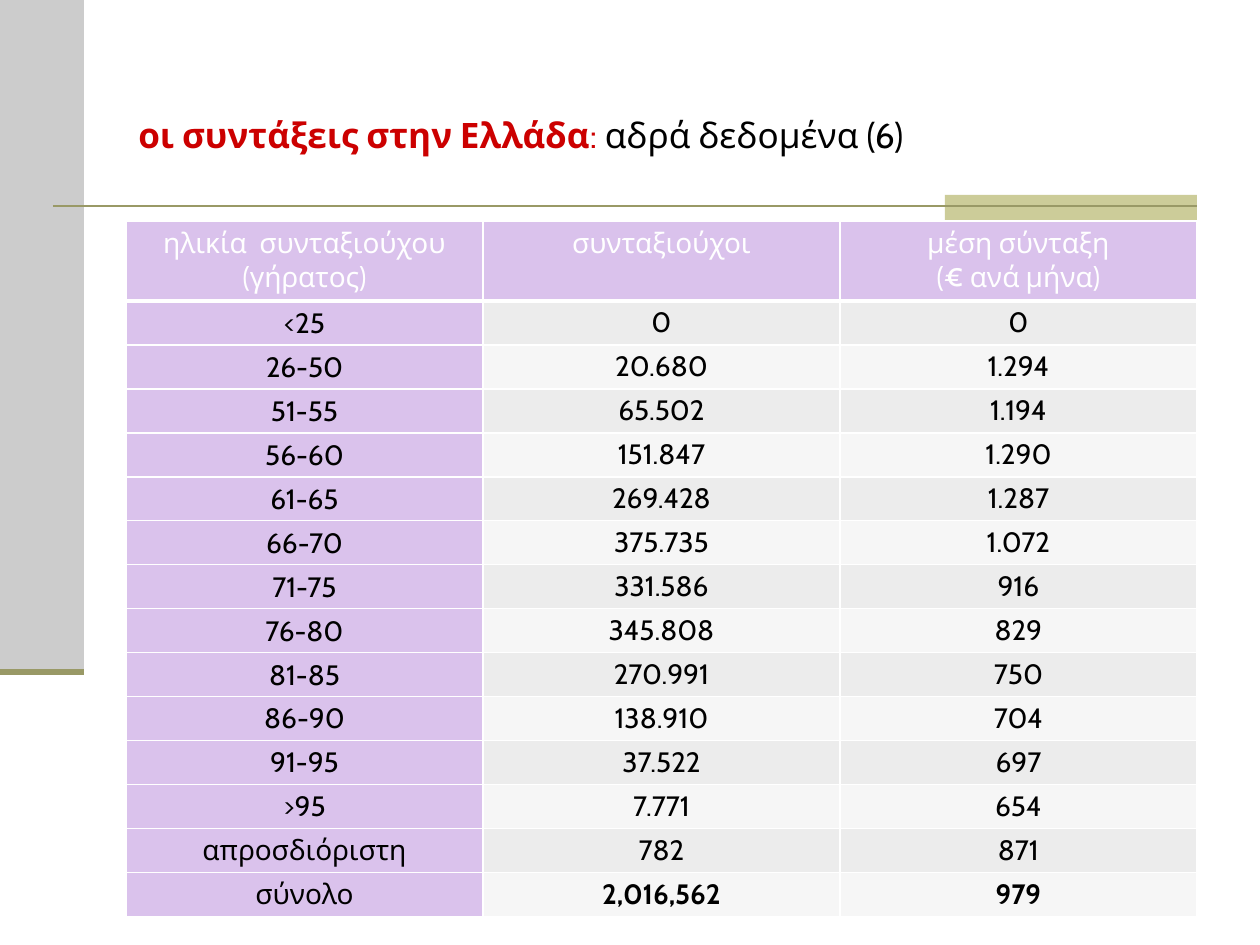
from lxml import etree
from pptx import Presentation, util as u
from pptx.dml.color import RGBColor
from pptx.enum import shapes, text
from pptx.oxml import ns

PX = 914400 / 126
GREY = RGBColor(0xCC, 0xCC, 0xCC)
SAND = RGBColor(0xCC, 0xCC, 0x99)
OLIVE = RGBColor(0x99, 0x99, 0x66)
RED = RGBColor(0xCC, 0x00, 0x00)
BLACK = RGBColor(0x00, 0x00, 0x00)
WHITE = RGBColor(0xFF, 0xFF, 0xFF)
LILAC = RGBColor(0xDA, 0xC2, 0xEC)
BANDS = RGBColor(0xEC, 0xEC, 0xEC), RGBColor(0xF6, 0xF6, 0xF6)

HEADER = "ηλικία  συνταξιούχου (γήρατος)", "συνταξιούχοι", "μέση σύνταξη\n(€ ανά μήνα)"
PENSIONS = [
    ("<25", "0", "0"),
    ("26-50", "20.680", "1.294"),
    ("51-55", "65.502", "1.194"),
    ("56-60", "151.847", "1.290"),
    ("61-65", "269.428", "1.287"),
    ("66-70", "375.735", "1.072"),
    ("71-75", "331.586", "916"),
    ("76-80", "345.808", "829"),
    ("81-85", "270.991", "750"),
    ("86-90", "138.910", "704"),
    ("91-95", "37.522", "697"),
    (">95", "7.771", "654"),
    ("απροσδιόριστη", "782", "871"),
    ("σύνολο", "2,016,562", "979"),
]


def px(*values):
    return [u.Emu(round(v * PX)) for v in values]


def add_text(p, content, size=16, color=BLACK, bold=False, font="Cabin"):
    for i, line in enumerate(content.split("\n")):
        if i:
            p.add_line_break()
        r = p.add_run()
        r.text = line
        r.font.name, r.font.size, r.font.bold = font, u.Pt(size), bold
        r.font.color.rgb = color


class Deck:
    """Draws styled elements on the current slide."""

    def __init__(self, prs):
        self.s = prs.slides.add_slide(prs.slide_layouts[6])

    def rect(self, x, y, w, h, color):
        sp = self.s.shapes.add_shape(shapes.MSO_SHAPE.RECTANGLE, *px(x, y, w, h))
        sp.shadow.inherit = False
        sp.fill.solid()
        sp.fill.fore_color.rgb = color
        sp.line.fill.background()

    def line(self, x1, y1, x2, y2, width):
        ln = self.s.shapes.add_connector(shapes.MSO_CONNECTOR.STRAIGHT, *px(x1, y1, x2, y2))
        ln.line.color.rgb = OLIVE
        ln.line.width = u.Pt(width)
        etree.SubElement(ln._element.spPr, ns.qn("a:effectLst"))

    def title(self, x, y, w, h, parts):
        tf = self.s.shapes.add_textbox(*px(x, y, w, h)).text_frame
        tf.word_wrap = True
        tf.vertical_anchor = text.MSO_ANCHOR.MIDDLE
        for content, style in parts:
            add_text(tf.paragraphs[0], content, size=20, **style)

    def borders(self, cell, top=1, bottom=1):
        tc_pr = cell._tc.get_or_add_tcPr()
        for side, width in zip("LRTB", (1, 1, top, bottom)):
            ln = etree.SubElement(tc_pr, ns.qn(f"a:ln{side}"), w=str(u.Pt(width)))
            fill = etree.SubElement(ln, ns.qn("a:solidFill"))
            etree.SubElement(fill, ns.qn("a:srgbClr"), val=str(WHITE))

    def cell(self, cell, content, fill, margins, anchor, top=1, bottom=1, **style):
        self.borders(cell, top, bottom)
        cell.fill.solid()
        cell.fill.fore_color.rgb = fill
        cell.margin_left, cell.margin_top, cell.margin_right, cell.margin_bottom = px(*margins)
        cell.vertical_anchor = anchor
        p = cell.text_frame.paragraphs[0]
        p.alignment = text.PP_ALIGN.CENTER
        add_text(p, content, **style)

    def table(self, x, y, w, header_h, row_h, header, rows):
        n, m = len(rows), len(header)
        frame = self.s.shapes.add_table(n + 1, m, *px(x, y, w, header_h + n * row_h))
        tbl = frame.table
        for col in tbl.columns:
            col.width = px(w / m)[0]
        for i, row in enumerate(tbl.rows):
            row.height = px(row_h if i else header_h)[0]
        for j, content in enumerate(header):
            self.cell(tbl.cell(0, j), content, LILAC, (13, 6, 13, 6),
                      text.MSO_ANCHOR.TOP, bottom=3, color=WHITE)
        for i, row in enumerate(rows):
            for j, content in enumerate(row):
                self.cell(tbl.cell(i + 1, j), content, BANDS[i % 2] if j else LILAC,
                          (0, 0, 0, 0) if j else (1, 1, 1, 0), text.MSO_ANCHOR.MIDDLE,
                          top=1 if i else 3, bold=j > 0 and i == n - 1)


def main():
    prs = Presentation()
    prs.slide_width, prs.slide_height = px(1260, 945)
    deck = Deck(prs)
    deck.rect(0, 0, 84, 672, GREY)
    deck.rect(945, 195, 252, 25, SAND)
    deck.line(53, 206, 1197, 206, 1.5)
    deck.line(0, 672, 84, 672, 3.5)
    deck.title(126, 73, 1071, 122, [
        ("οι συντάξεις στην Ελλάδα", dict(color=RED, bold=True)),
        (": ", dict(color=RED)),
        ("αδρά δεδομένα (6)", {}),
    ])
    deck.table(126, 221, 1071, 80, 44, HEADER, PENSIONS)
    prs.save("out.pptx")


if __name__ == "__main__":
    main()
